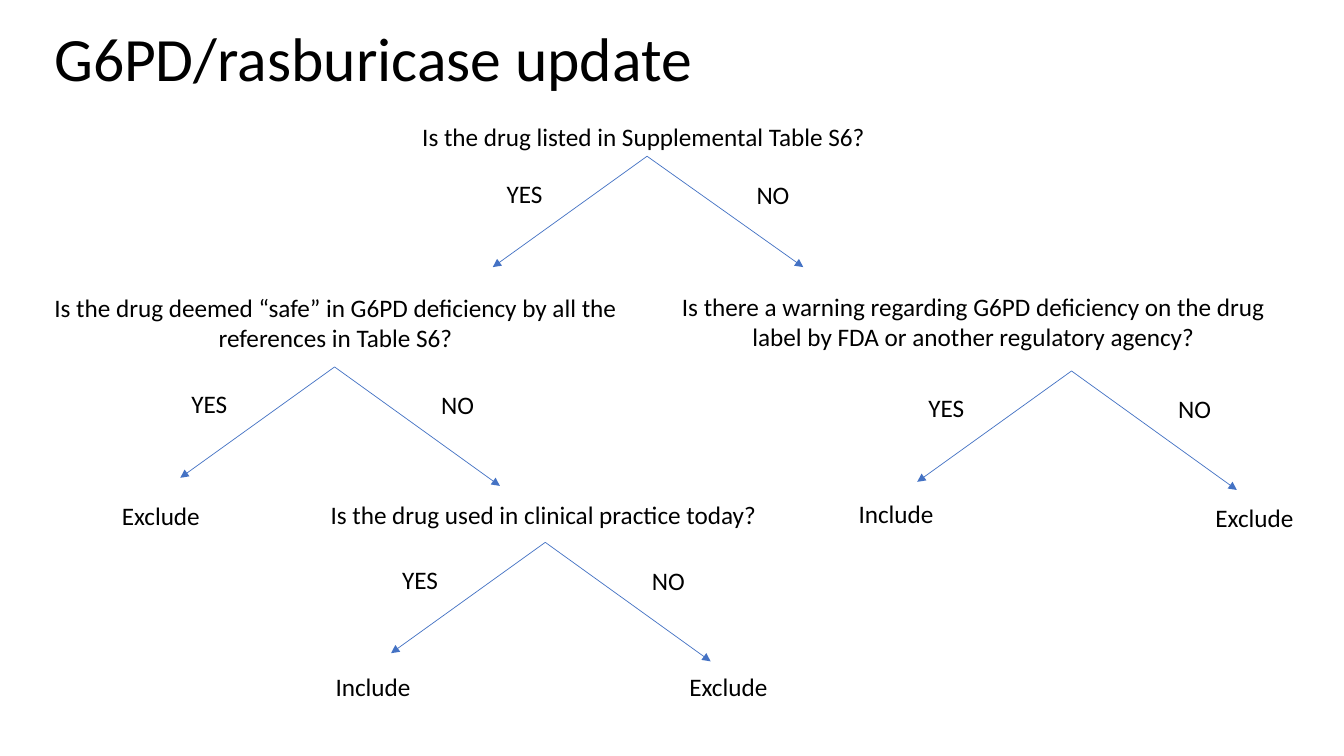
"""Build the G6PD/rasburicase decision tree slide."""
from dataclasses import dataclass

from pptx import Presentation
from pptx.dml.color import RGBColor
from pptx.enum import shapes, text
from pptx.oxml import xmlchemy as xc
from pptx.slide import Slide
from pptx.util import Pt

FONT = "Calibri"
BLACK = "000000"
BLUE = "4472C4"
LABEL_WIDTH = 98.6
LINE_HEIGHT = 28.8


@dataclass(frozen=True)
class Caption:
    words: str
    left: float
    top: float
    width: float = LABEL_WIDTH
    height: float = LINE_HEIGHT
    size: int = 18
    align: text.PP_ALIGN = text.PP_ALIGN.LEFT
    anchor: text.MSO_ANCHOR = text.MSO_ANCHOR.TOP
    line_spacing: float = 1.0


@dataclass(frozen=True)
class Fork:
    x: float
    y: float
    no_dx: float = 118.1
    no_dy: float = 85
    label_shift: float = 0


CENTER = text.PP_ALIGN.CENTER

TITLE = Caption("G6PD/rasburicase update", 31.7, -8.6, 828, 104.4, 44,
                anchor=text.MSO_ANCHOR.MIDDLE, line_spacing=0.9)

QUESTIONS = [
    Caption("Is the drug listed in Supplemental Table S6?", 294.5, 82.8, 445),
    Caption("Is the drug deemed “safe” in G6PD deficiency by all the references in Table S6?",
            -5.8, 205.2, 491, 51.1, align=CENTER),
    Caption("Is there a warning regarding G6PD deficiency on the drug label by FDA "
            "or another regulatory agency?", 466.6, 204.5, 457.2, 51.1, align=CENTER),
    Caption("Is the drug used in clinical practice today?", 229, 352.8, 491),
]

OUTCOMES = [
    Caption("Exclude", 79.9, 353.5),
    Caption("Include", 232.6, 475.9),
    Caption("Exclude", 485.3, 475.9),
    Caption("Include", 606.2, 352.1),
    Caption("Exclude", 861.1, 355),
]

FORKS = [
    Fork(462.2, 111.6, no_dx=111.6, no_dy=79.2, label_shift=2),
    Fork(239, 262.1),
    Fork(765.4, 265),
    Fork(389.5, 387.4),
]


def color(value: str) -> RGBColor:
    return RGBColor.from_string(value)


def draw_caption(slide: Slide, caption: Caption) -> None:
    box = slide.shapes.add_textbox(Pt(caption.left), Pt(caption.top),
                                   Pt(caption.width), Pt(caption.height))
    frame = box.text_frame
    frame.word_wrap = True
    frame.vertical_anchor = caption.anchor
    paragraph = frame.paragraphs[0]
    paragraph.text = caption.words
    paragraph.alignment = caption.align
    paragraph.line_spacing = caption.line_spacing
    paragraph.font.name = FONT
    paragraph.font.size = Pt(caption.size)
    paragraph.font.color.rgb = color(BLACK)


def draw_arrow(slide: Slide, fork: Fork, dx: float, dy: float) -> None:
    arrow = slide.shapes.add_connector(
        shapes.MSO_CONNECTOR.STRAIGHT,
        Pt(fork.x), Pt(fork.y), Pt(fork.x + dx), Pt(fork.y + dy))
    arrow.line.color.rgb = color(BLUE)
    arrow.line.width = Pt(0.5)
    outline = arrow.line._get_or_add_ln()
    outline.append(xc.OxmlElement("a:tailEnd"))
    outline[-1].set("type", "triangle")
    arrow._element.spPr.append(xc.OxmlElement("a:effectLst"))


def draw_fork(slide: Slide, fork: Fork) -> None:
    draw_arrow(slide, fork, -110.2, 79.2)
    draw_arrow(slide, fork, fork.no_dx, fork.no_dy)
    for answer, dx, dy in (("YES", -109.4, 12), ("NO", 69.1, 12.7)):
        draw_caption(slide, Caption(answer, fork.x + dx + fork.label_shift, fork.y + dy))


def main() -> None:
    deck = Presentation()
    deck.slide_width, deck.slide_height = Pt(960), Pt(540)
    slide = deck.slides.add_slide(deck.slide_layouts[6])
    for caption in [TITLE, *QUESTIONS, *OUTCOMES]:
        draw_caption(slide, caption)
    for fork in FORKS:
        draw_fork(slide, fork)
    deck.save("out.pptx")


if __name__ == "__main__":
    main()
